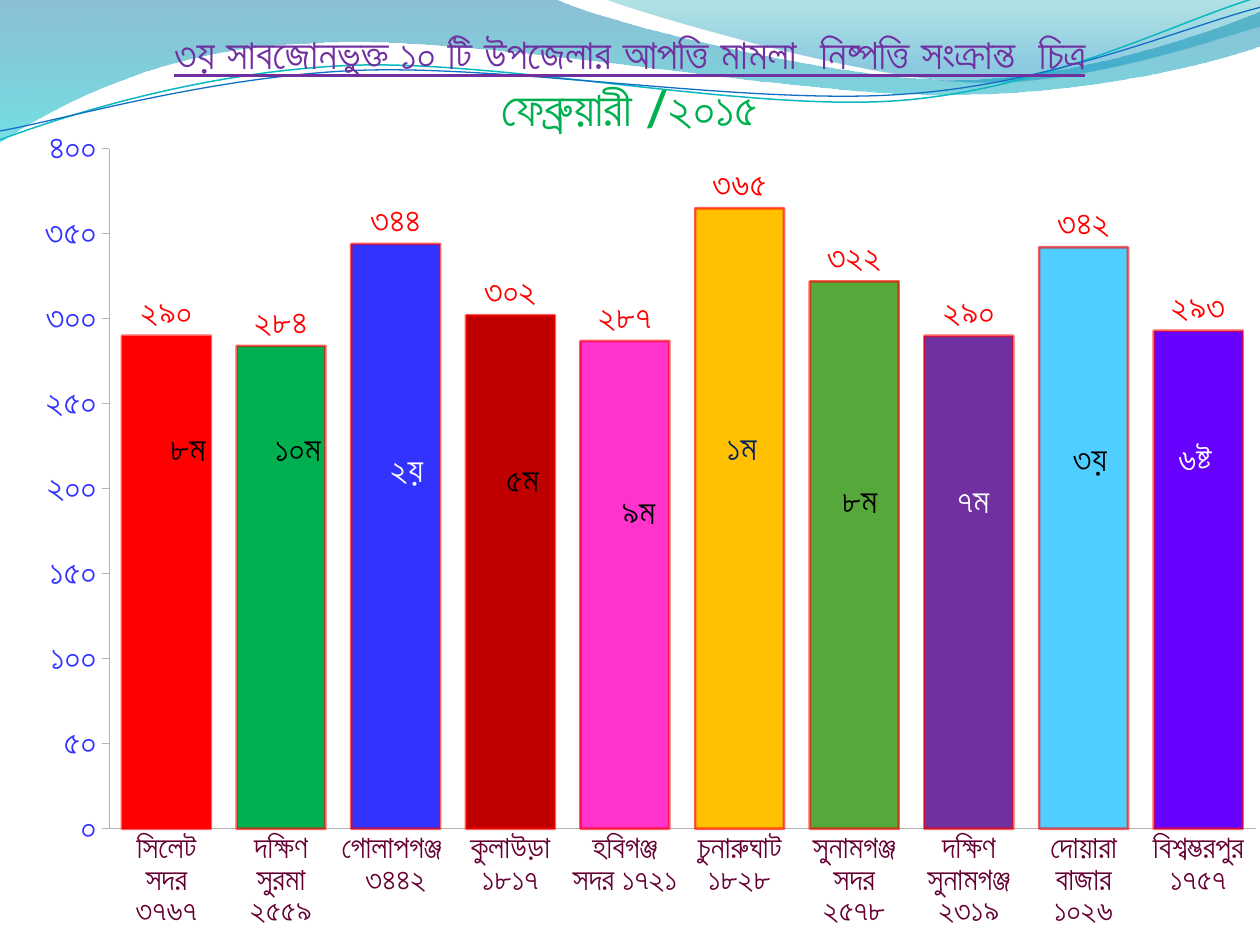
from lxml import etree
from pptx import Presentation
from pptx.chart.data import CategoryChartData
from pptx.dml.color import RGBColor
from pptx.enum.chart import XL_CHART_TYPE, XL_LABEL_POSITION, XL_TICK_MARK
from pptx.enum.text import PP_ALIGN
from pptx.oxml import parse_xml
from pptx.oxml.ns import qn
from pptx.util import Cm, Pt

COLUMN = XL_CHART_TYPE.COLUMN_CLUSTERED
OUTEND = XL_LABEL_POSITION.OUTSIDE_END
OUTER, NONE = XL_TICK_MARK.OUTSIDE, XL_TICK_MARK.NONE
CENTER = PP_ALIGN.CENTER

FONT, BASE = "Lato", "Vollkorn"
DIGITS = "[$-5000445]0"
NUKTA = chr(0x9BC)
JOINS = {chr(0x9AF): chr(0x9DF), chr(0x9A1): chr(0x9DC)}

BLACK = RGBColor(0x00, 0x00, 0x00)
WHITE = RGBColor(0xFF, 0xFF, 0xFF)
NAVY = RGBColor(0x00, 0x20, 0x60)
PURPLE = RGBColor(0x70, 0x30, 0xA0)
GREEN = RGBColor(0x00, 0xB0, 0x50)
RED = RGBColor(0xFF, 0x00, 0x00)
BLUE = RGBColor(0x33, 0x33, 0xFF)
MAROON = RGBColor(0x66, 0x00, 0x33)
BRICK = RGBColor(0xC0, 0x00, 0x00)
PINK = RGBColor(0xFF, 0x33, 0xCC)
GOLD = RGBColor(0xFF, 0xC0, 0x00)
LEAF = RGBColor(0x55, 0xA8, 0x39)
SKY = RGBColor(0x4F, 0xCE, 0xFF)
VIOLET = RGBColor(0x66, 0x00, 0xFF)
GREY = RGBColor(0xB3, 0xB3, 0xB3)
OCEAN = RGBColor(0x0F, 0x6F, 0xC6)
TEAL = RGBColor(0x0A, 0xB8, 0xBF)
DEEP = RGBColor(0x00, 0x74, 0xA1)
AQUA = RGBColor(0x00, 0xC6, 0xCF)
MINT = RGBColor(0x00, 0xA1, 0xA9)
AZURE = RGBColor(0x00, 0x8B, 0xBF)

BARS = [
    ("সিলেট সদর ৩৭৬৭", 290, RED),
    ("দক্ষিণ সুরমা ২৫৫৯", 284, GREEN),
    ("গোলাপগঞ্জ  ৩৪৪২", 344, BLUE),
    ("কুলাউড়া ১৮১৭", 302, BRICK),
    ("হবিগঞ্জ সদর ১৭২১", 287, PINK),
    ("চুনারুঘাট ১৮২৮", 365, GOLD),
    ("সুনামগঞ্জ সদর ২৫৭৮", 322, LEAF),
    ("দক্ষিণ সুনামগঞ্জ ২৩১৯", 290, PURPLE),
    ("দোয়ারা বাজার ১০২৬", 342, SKY),
    ("বিশ্বম্ভরপুর ১৭৫৭", 293, VIOLET),
]
RANKS = [
    ("১ম", 14.4, 8.46, 1.48, 1.27, NAVY, True),
    ("৩য়", 21.38, 8.68, 2.33, 1.06, BLACK, True),
    ("৮ম", 3.18, 8.47, 1.69, 1.06, BLACK, True),
    ("৬ষ্ট", 23.5, 8.68, 1.48, 1.48, WHITE, True),
    ("১০ম", 5.29, 8.47, 2.33, 1.06, BLACK, True),
    ("২য়", 7.62, 8.89, 2.54, 2.54, WHITE, True),
    ("৫ম", 9.95, 9.1, 2.54, 2.54, BLACK, True),
    ("৯ম", 12.28, 9.74, 2.54, 2.54, BLACK, True),
    ("৮ম", 16.72, 9.53, 2.54, 2.54, BLACK, False),
    ("৭ম", 19.05, 9.53, 2.54, 2.54, WHITE, True),
]
WAVES = [
    ([(0, 0), (11.18, -0.03), (12.09, 0.43, 16.87, 1.6, 19.25, 1.6),
      (21.67, 1.6, 24.33, 0.66, 25.4, 0.23), (25.43, 0.91),
      (24.97, 1.12, 22.1, 1.93, 18.95, 1.91), (15.8, 1.91, 9.7, 0.71, 6.53, 0.86),
      (3.28, 0.91, 1.17, 2.11, -0.03, 2.87), (0, 0)],
     [(0, DEEP, 45), (1, AQUA, 55)]),
    ([(12.17, -0.03), (12.95, 0.28, 17.32, 1.57, 19.53, 1.65),
      (21.74, 1.75, 24.41, 0.81, 25.4, 0.53), (25.4, 0), (12.17, -0.03)],
     [(0, MINT, 30), (0.8, AZURE, 45)]),
]
LINES = [
    ([(0, 2.82), (1.22, 2.36, 4.01, 1.45, 7.04, 1.32),
      (10.03, 1.19, 15.06, 2.26, 18.11, 2.03), (21.16, 1.8, 23.83, 0.38, 25.35, -0.05)],
     TEAL, 0.85),
    ([(0, 2.64), (1.19, 2.44, 4.17, 1.55, 7.19, 1.42),
      (10.24, 1.3, 15.16, 2.13, 18.21, 1.9), (21.23, 1.7, 23.9, 0.53, 25.4, 0.15)],
     OCEAN, 0.75),
]


def join(text):
    """Write each dotted Bengali letter as one character."""
    for base, whole in JOINS.items():
        text = text.replace(base + NUKTA, whole)
    return text


def style(font, size, color, bold=False):
    """Set the face, size, colour and weight of a font."""
    font.name, font.size, font.bold = FONT, Pt(size), bold
    font.color.rgb = color


def fade(node, share):
    """Give every plain colour under a node an opacity in percent."""
    for color in node.iter(qn("a:srgbClr")):
        etree.SubElement(color, qn("a:alpha")).set("val", str(share * 1000))


def draw(slide, x, y, steps, close):
    """Build one outline of lines and cubic curves from the given corner."""
    ends = [(Cm(x + step[-2]), Cm(y + step[-1])) for step in steps]
    build = slide.shapes.build_freeform(*ends[0], scale=1.0)
    build.add_line_segments(ends[1:], close=close)
    shape = build.convert_to_shape()
    shape.shadow.inherit = False
    legs = list(shape._element.iter(qn("a:lnTo")))
    for leg, step in zip(legs, steps[1:]):
        if len(step) == 2:
            continue
        leg.tag = qn("a:cubicBezTo")
        for i in (0, 2):
            knot = etree.Element(qn("a:pt"))
            knot.set("x", str(Cm(x + step[i]) - shape.left))
            knot.set("y", str(Cm(y + step[i + 1]) - shape.top))
            leg.insert(i // 2, knot)
    return shape


def add_waves(slide, x, y):
    """Draw the tinted waves and thin curves of the top band."""
    for steps, stops in WAVES:
        shape = draw(slide, x, y, steps, True)
        shape.line.fill.background()
        shape.fill.gradient()
        shape.fill.gradient_angle = 270
        for stop, (place, color, share) in zip(shape.fill.gradient_stops, stops):
            stop.position, stop.color.rgb = place, color
            fade(stop.color._xFill, share)
    for steps, color, width in LINES:
        shape = draw(slide, x, y, steps, False)
        shape.fill.background()
        shape.line.color.rgb = color
        shape.line.width = Pt(width)


def add_title(slide, x, y, w, h):
    """Write the two centred heading lines."""
    frame = slide.shapes.add_textbox(Cm(x), Cm(y), Cm(w), Cm(h)).text_frame
    frame.word_wrap = True
    frame.text = join("৩য় সাবজোনভুক্ত ১০ টি উপজেলার আপত্তি মামলা  নিষ্পত্তি সংক্রান্ত  চিত্র\n"
                      "ফেব্রুয়ারী /২০১৫")
    looks = [(24, PURPLE, True), (28, GREEN, False)]
    for para, (size, color, under) in zip(frame.paragraphs, looks):
        para.alignment = CENTER
        font = para.runs[0].font
        style(font, size, color, True)
        font.underline = under


def add_bars(slide, x, y, w, h):
    """Place the column chart with one colour for each district."""
    names, vals, colors = zip(*BARS)
    data = CategoryChartData()
    data.categories = [join(name) for name in names]
    data.add_series("Series 1", vals)
    chart = slide.shapes.add_chart(COLUMN, Cm(x), Cm(y), Cm(w), Cm(h), data).chart
    chart.has_legend = chart.has_title = False
    chart.font.name, chart.font.size = BASE, Pt(10)
    chart.font.color.rgb = WHITE
    cat, val = chart.category_axis, chart.value_axis
    for axis, tick, size, color in ((cat, NONE, 18, MAROON), (val, OUTER, 20, BLUE)):
        axis.has_major_gridlines = False
        axis.major_tick_mark, axis.minor_tick_mark = tick, NONE
        axis.format.line.color.rgb = GREY
        axis.format.line.width = Pt(0.5)
        style(axis.tick_labels.font, size, color)
    val.minimum_scale, val.maximum_scale, val.major_unit = 0, 400, 50
    plot = chart.plots[0]
    plot.gap_width, plot.overlap, plot.vary_by_categories = 29, 1, False
    series = plot.series[0]
    labels = series.data_labels
    labels.show_value, labels.position = True, OUTEND
    style(labels.font, 20, RED)
    for part in (val.tick_labels, labels):
        part.number_format, part.number_format_is_linked = DIGITS, False
    marks = [series] + [series.points[i] for i in range(len(vals))]
    for mark, color in zip(marks, (OCEAN,) + colors):
        look = mark.format
        look.fill.solid()
        look.fill.fore_color.rgb = color
        look.line.color.rgb = RED
        look.line.width = Pt(1.5)
        fade(look.line._ln, 62)
    set_area(chart, 0.07, 0.04, 0.91, 0.82)


def set_area(chart, x, y, w, h):
    """Fix the inner plot area as shares of the chart box."""
    area = chart._chartSpace.chart.plotArea
    for old in area.findall(qn("c:layout")):
        area.remove(old)
    tags = [("layoutTarget", "inner"), ("xMode", "edge"), ("yMode", "edge"),
            ("x", x), ("y", y), ("w", w), ("h", h)]
    body = "".join(f'<c:{tag} val="{val}"/>' for tag, val in tags)
    space = "http://schemas.openxmlformats.org/drawingml/2006/chart"
    area.insert(0, parse_xml(
        f'<c:layout xmlns:c="{space}"><c:manualLayout>{body}</c:manualLayout></c:layout>'))


def add_ranks(slide, x, y):
    """Write the rank of each district on its bar."""
    for text, left, top, w, h, color, bold in RANKS:
        box = slide.shapes.add_textbox(Cm(x + left), Cm(y + top), Cm(w), Cm(h))
        box.text_frame.word_wrap = True
        box.text_frame.text = join(text)
        style(box.text_frame.paragraphs[0].runs[0].font, 20, color, bold)


def main():
    """Build the slide and save it."""
    deck = Presentation()
    deck.slide_width, deck.slide_height = Cm(25.4), Cm(19.05)
    slide = deck.slides.add_slide(deck.slide_layouts[6])
    add_waves(slide, 0, 0)
    add_title(slide, 0, 0.42, 25.4, 2.5)
    add_bars(slide, 0.42, 2.33, 25.4, 16.72)
    add_ranks(slide, 0, 0)
    deck.save("out.pptx")


if __name__ == "__main__":
    main()
